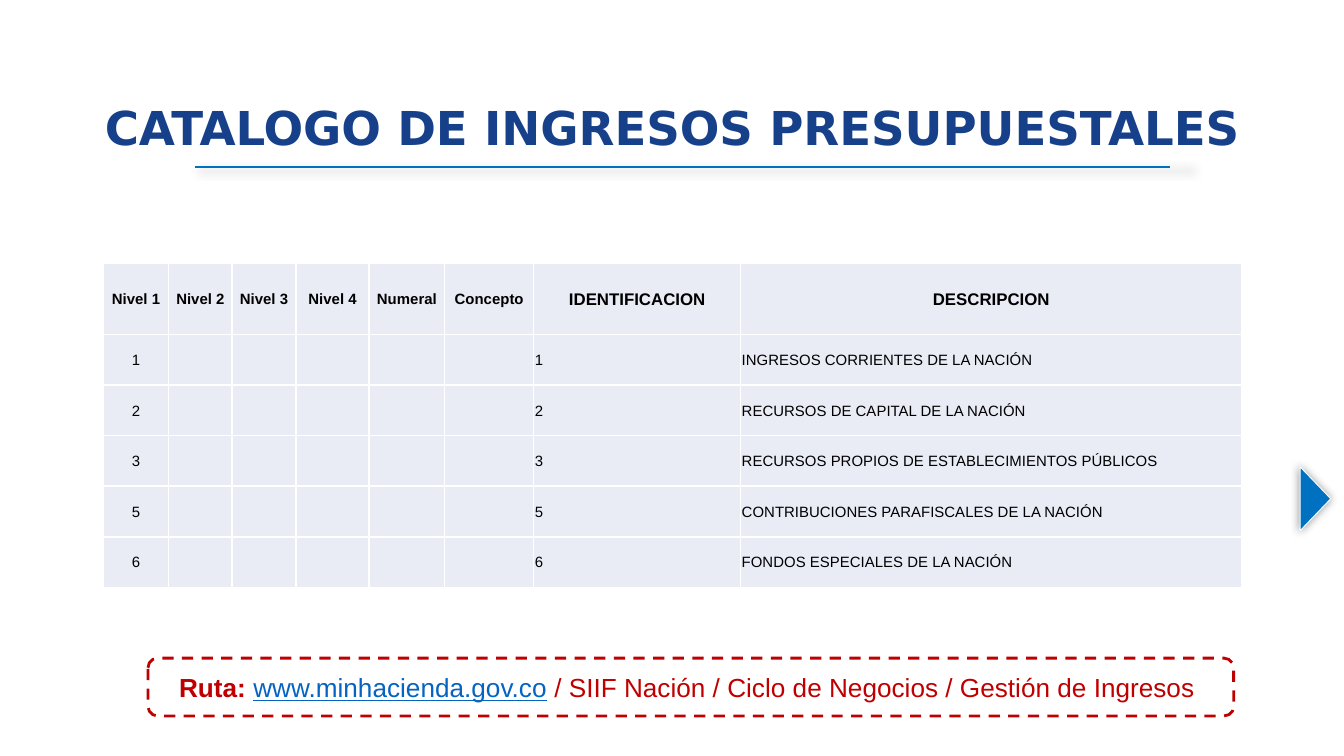
from lxml import etree
from pptx import Presentation
from pptx.dml.color import RGBColor
from pptx.enum.dml import MSO_LINE
from pptx.enum.shapes import MSO_CONNECTOR, MSO_SHAPE
from pptx.enum.text import MSO_ANCHOR, PP_ALIGN
from pptx.oxml.ns import qn
from pptx.util import Pt

TITLE = "CATALOGO DE INGRESOS PRESUPUESTALES"
HEADERS = ["Nivel 1", "Nivel 2", "Nivel 3", "Nivel 4", "Numeral", "Concepto",
           "IDENTIFICACION", "DESCRIPCION"]
INCOME_TYPES = [
    ("1", "INGRESOS CORRIENTES DE LA NACIÓN"),
    ("2", "RECURSOS DE CAPITAL DE LA NACIÓN"),
    ("3", "RECURSOS PROPIOS DE ESTABLECIMIENTOS PÚBLICOS"),
    ("5", "CONTRIBUCIONES PARAFISCALES DE LA NACIÓN"),
    ("6", "FONDOS ESPECIALES DE LA NACIÓN"),
]
COLUMN_WIDTHS = [35, 34, 34.2, 39.3, 40.4, 47.7, 110.8, 268.6]
HEADER_HEIGHT, ROW_HEIGHT = 38, 27.1
WIDE_COLUMN = 6

RED = RGBColor(0xC0, 0x00, 0x00)
LINK_BLUE = RGBColor(0x05, 0x63, 0xC1)
NAVY = RGBColor(0x16, 0x41, 0x8A)
BLUE = RGBColor(0x00, 0x70, 0xC0)
PALE = RGBColor(0xE9, 0xEB, 0xF5)
WHITE = RGBColor(0xFF, 0xFF, 0xFF)
BLACK = RGBColor(0x00, 0x00, 0x00)
ROUTE = [
    ("Ruta: ", RED, True, False),
    ("www.minhacienda.gov.co", LINK_BLUE, False, True),
    (" / SIIF Nación / Ciclo de Negocios / Gestión de Ingresos ", RED, False, False),
]

CENTER, LEFT = PP_ALIGN.CENTER, PP_ALIGN.LEFT
MIDDLE = MSO_ANCHOR.MIDDLE
ROUNDED, TRIANGLE = MSO_SHAPE.ROUNDED_RECTANGLE, MSO_SHAPE.ISOSCELES_TRIANGLE
STRAIGHT, DASH = MSO_CONNECTOR.STRAIGHT, MSO_LINE.DASH


def style_font(font, name, size, color, bold):
    font.name = name
    font.size = Pt(size)
    font.color.rgb = color
    font.bold = bold


def add_soft_shadow(shape):
    effects = etree.SubElement(shape._element.spPr, qn("a:effectLst"))
    shadow = etree.SubElement(effects, qn("a:outerShdw"), blurRad=str(Pt(5)), dist="0",
                              dir="0", sx="102000", sy="102000", algn="tl", rotWithShape="0")
    color = etree.SubElement(shadow, qn("a:srgbClr"), val=str(BLACK))
    etree.SubElement(color, qn("a:alpha"), val="40000")


def add_borders(cell):
    properties = cell._tc.get_or_add_tcPr()
    for position, side in enumerate(("a:lnL", "a:lnR", "a:lnT", "a:lnB")):
        line = etree.Element(qn(side), w=str(Pt(1)))
        fill = etree.SubElement(line, qn("a:solidFill"))
        etree.SubElement(fill, qn("a:srgbClr"), val=str(WHITE))
        properties.insert(position, line)


def fill_cell(cell, text, size, bold, alignment):
    cell.fill.solid()
    cell.fill.fore_color.rgb = PALE
    cell.margin_left = cell.margin_right = cell.margin_top = Pt(0.7)
    cell.margin_bottom = 0
    cell.vertical_anchor = MIDDLE
    add_borders(cell)
    paragraph = cell.text_frame.paragraphs[0]
    paragraph.alignment = alignment
    if text:
        paragraph.text = text
        style_font(paragraph.runs[0].font, "Arial", size, BLACK, bold)


def add_route(slide):
    shape = slide.shapes.add_shape(ROUNDED, Pt(79.3), Pt(352.6), Pt(581.6), Pt(31))
    shape.shadow.inherit = False
    shape.fill.background()
    shape.line.color.rgb = RED
    shape.line.width = Pt(1.5)
    shape.line.dash_style = DASH
    shape.text_frame.word_wrap = True
    shape.text_frame.vertical_anchor = MIDDLE
    paragraph = shape.text_frame.paragraphs[0]
    paragraph.alignment = CENTER
    for text, color, bold, underline in ROUTE:
        run = paragraph.add_run()
        run.text = text
        style_font(run.font, "Arial", 14, color, bold)
        run.font.underline = underline


def add_title(slide):
    rule = slide.shapes.add_connector(STRAIGHT, Pt(104.4), Pt(89.3), Pt(627), Pt(89.3))
    rule.line.color.rgb = BLUE
    rule.line.width = Pt(1)
    add_soft_shadow(rule)
    box = slide.shapes.add_textbox(0, Pt(49.7), Pt(720), Pt(67.7))
    box.text_frame.word_wrap = True
    paragraph = box.text_frame.paragraphs[0]
    paragraph.text = TITLE
    paragraph.alignment = CENTER
    style_font(paragraph.runs[0].font, "DejaVu Sans", 25, NAVY, True)


def add_catalogue(slide):
    rows = [HEADERS] + [[code] + [""] * 5 + [code, name] for code, name in INCOME_TYPES]
    height = HEADER_HEIGHT + ROW_HEIGHT * len(INCOME_TYPES)
    table = slide.shapes.add_table(len(rows), len(HEADERS), Pt(55.4), Pt(141.2),
                                   Pt(sum(COLUMN_WIDTHS)), Pt(height)).table
    table.first_row = table.horz_banding = False
    for column, width in zip(table.columns, COLUMN_WIDTHS):
        column.width = Pt(width)
    for row_index, texts in enumerate(rows):
        header = row_index == 0
        table.rows[row_index].height = Pt(HEADER_HEIGHT if header else ROW_HEIGHT)
        for column_index, text in enumerate(texts):
            wide = column_index >= WIDE_COLUMN
            fill_cell(table.cell(row_index, column_index), text,
                      9 if header and wide else 8, header,
                      CENTER if header or not wide else LEFT)


def add_arrow(slide):
    arrow = slide.shapes.add_shape(TRIANGLE, Pt(687.6), Pt(259), Pt(34.2), Pt(16.4))
    arrow.rotation = 90
    arrow.fill.solid()
    arrow.fill.fore_color.rgb = BLUE
    arrow.line.color.rgb = WHITE
    arrow.line.width = Pt(0.5)
    add_soft_shadow(arrow)


def main():
    presentation = Presentation()
    presentation.slide_width = Pt(720)
    presentation.slide_height = Pt(405)
    slide = presentation.slides.add_slide(presentation.slide_layouts[6])
    add_route(slide)
    add_title(slide)
    add_catalogue(slide)
    add_arrow(slide)
    presentation.save("out.pptx")


if __name__ == "__main__":
    main()
